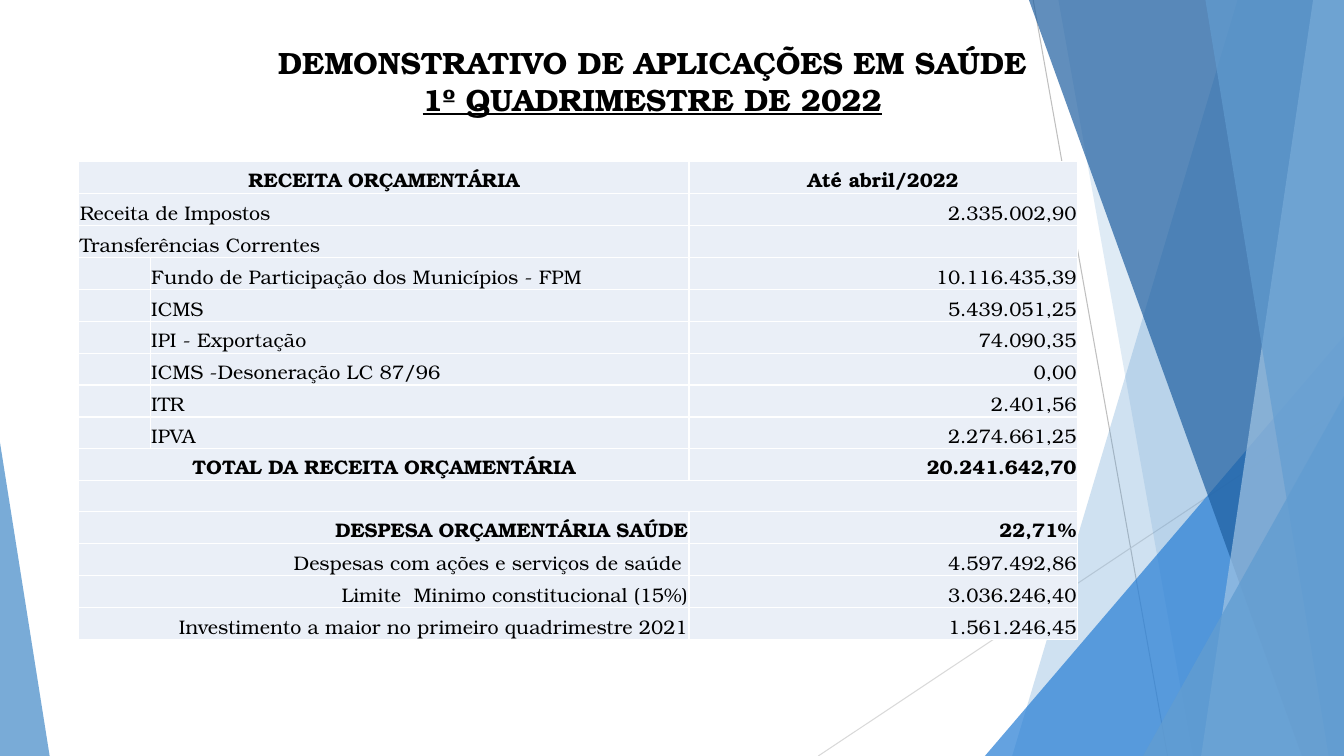
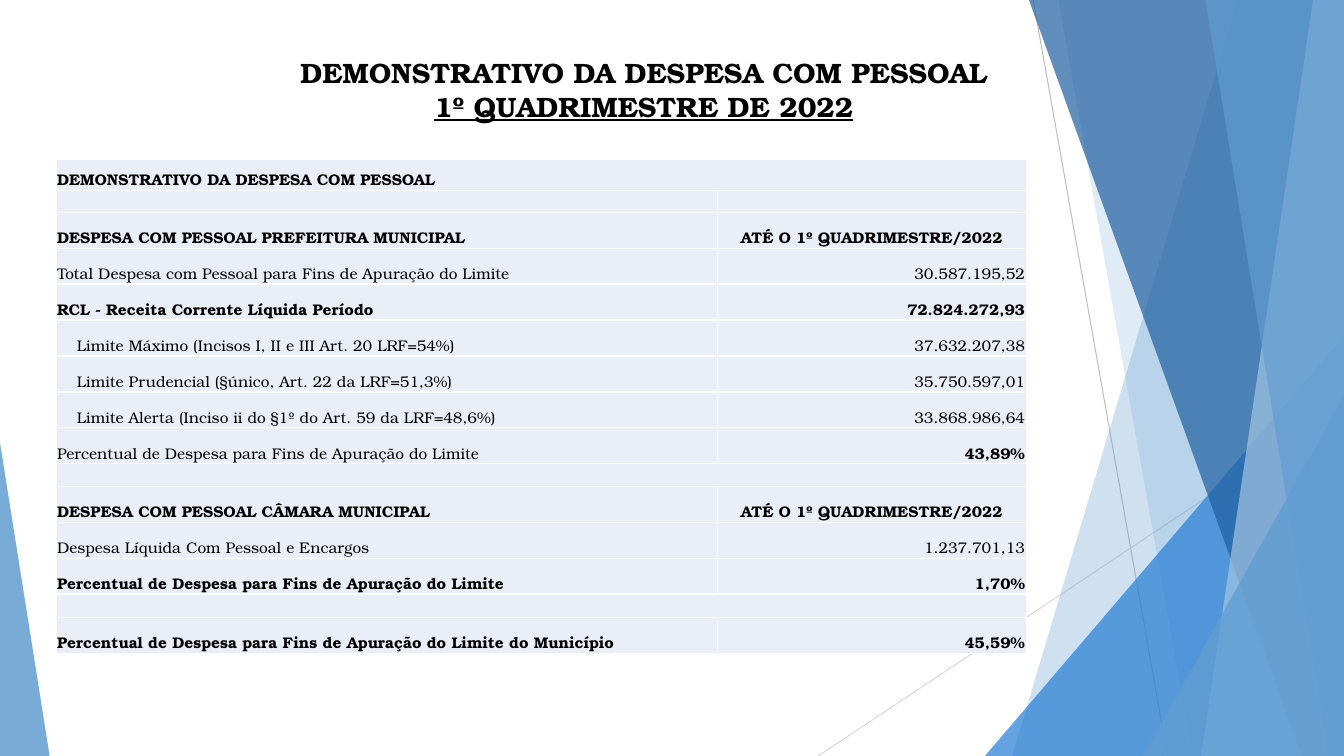
from dataclasses import dataclass

from lxml import etree
from pptx import Presentation
from pptx import util as u
from pptx.dml.color import RGBColor
from pptx.enum import shapes, text
from pptx.oxml.ns import qn

FONT = "TeX Gyre Bonum"
COLORS = {
    "ink": "000000",
    "cell": "EAEFF7",
    "sky": "629DD1",
    "blue": "297FD5",
    "navy": "1F5FA0",
    "pale": "A1C4E3",
    "line": "BFBFBF",
    "faint line": "D9D9D9",
}
WIDTH, HEIGHT = 960, 540
LEFT, CENTER, RIGHT = text.PP_ALIGN.LEFT, text.PP_ALIGN.CENTER, text.PP_ALIGN.RIGHT
CELL_INSET = 0.75
PERIOD = "1º QUADRIMESTRE DE 2022"
UP_TO_PERIOD = "ATÉ O 1º QUADRIMESTRE/2022"


@dataclass
class Row:
    """One table line: a label, and a value in the last column."""
    label: str = ""
    value: str = ""
    bold: bool = False
    value_bold: bool = False
    align: text.PP_ALIGN = LEFT
    value_align: text.PP_ALIGN = RIGHT
    nested: bool = False
    full_width: bool = False
    left: float = CELL_INSET
    right: float = CELL_INSET
    height: float = 0


def color(name):
    return RGBColor.from_string(COLORS[name])


def style_font(font, size, bold):
    font.name = FONT
    font.size = u.Pt(size)
    font.bold = bold
    font.color.rgb = color("ink")


def paint(shape, fill, opacity):
    """Fill a shape with a see-through colour, with no outline or shadow."""
    shape.shadow.inherit = False
    shape.line.fill.background()
    shape.fill.solid()
    shape.fill.fore_color.rgb = color(fill)
    tint = next(shape.element.spPr.iter(qn("a:srgbClr")))
    etree.SubElement(tint, qn("a:alpha"), val=str(opacity * 1000))
    return shape


def add_line(page, start, end, stroke):
    points = [u.Pt(value) for value in (*start, *end)]
    line = page.shapes.add_connector(shapes.MSO_CONNECTOR.STRAIGHT, *points)
    line.line.color.rgb = color(stroke)
    line.line.width = u.Pt(0.75)
    etree.SubElement(line.element.spPr, qn("a:effectLst"))
    return line


def add_band(page, top_x, bottom_x, fill, opacity):
    """Add a band with a slanted left edge, reaching the right edge of the page."""
    builder = page.shapes.build_freeform(top_x, 0, scale=u.Pt(1))
    builder.add_line_segments([(WIDTH, 0), (WIDTH, HEIGHT), (bottom_x, HEIGHT)])
    return paint(builder.convert_to_shape(), fill, opacity)


def add_triangle(page, left, top, width, apex, fill, opacity):
    """Add a triangle standing on the bottom edge; apex is 0 (left) to 1 (right)."""
    box = [u.Pt(value) for value in (left, top, width, HEIGHT - top)]
    triangle = page.shapes.add_shape(shapes.MSO_SHAPE.ISOSCELES_TRIANGLE, *box)
    triangle.adjustments[0] = apex
    return paint(triangle, fill, opacity)


def build_layout(deck):
    """Move the shared backdrop, drawn on the first slide, into the layout."""
    layout = deck.slide_layouts.get_by_name("Title Only")
    for holder in list(layout.placeholders):
        if holder.placeholder_format.type != shapes.PP_PLACEHOLDER.TITLE:
            holder.element.getparent().remove(holder.element)
    page = deck.slides.add_slide(layout)
    backdrop = [
        add_line(page, (738, 0), (834, HEIGHT), "line"),
        add_line(page, (WIDTH, 290), (584.5, HEIGHT), "faint line"),
        add_band(page, 884, 723, "sky", 30),
        add_band(page, 756, 852, "sky", 20),
        add_triangle(page, 703.5, 240, 256.5, 1, "blue", 72),
        add_band(page, 735, 930, "navy", 70),
        add_band(page, 938, 858, "pale", 70),
        add_band(page, 861, 949, "sky", 65),
        add_triangle(page, 816.5, 283, 143.5, 1, "sky", 80),
        add_triangle(page, 0, 316, 35.5, 0, "sky", 85),
    ]
    for index, shape in enumerate(backdrop, start=2):
        layout.shapes.element.insert(index, shape.element)
    return page, layout


def set_title(page, heading, left, top, size):
    title = page.shapes.title
    title.left, title.top = u.Pt(left), u.Pt(top)
    title.width, title.height = u.Pt(677), u.Pt(103.5)
    frame = title.text_frame
    frame.vertical_anchor = text.MSO_ANCHOR.TOP
    frame.auto_size = text.MSO_AUTO_SIZE.NONE
    para = frame.paragraphs[0]
    para.alignment = CENTER
    style_font(para.font, size, True)
    para.add_run().text = heading
    para.add_line_break()
    span = para.add_run()
    span.text = PERIOD
    span.font.underline = True


def format_cell(cell, size):
    cell.fill.solid()
    cell.fill.fore_color.rgb = color("cell")
    cell.vertical_anchor = text.MSO_ANCHOR.BOTTOM
    cell.margin_left = cell.margin_right = cell.margin_top = u.Pt(CELL_INSET)
    cell.margin_bottom = 0
    para = cell.text_frame.paragraphs[0]
    style_font(para.font, size, False)
    etree.SubElement(para._p, qn("a:endParaRPr"), sz=str(size * 100))


def write_cell(cell, wording, align, bold):
    if wording:
        para = cell.text_frame.paragraphs[0]
        para.add_run().text = wording
        para.alignment = align
        para.font.bold = bold


def add_budget_table(page, left, top, columns, rows, row_height, size):
    heights = [row.height or row_height for row in rows]
    frame = page.shapes.add_table(
        len(rows), len(columns), u.Pt(left), u.Pt(top),
        u.Pt(sum(columns)), u.Pt(sum(heights)))
    table = frame.table
    table.first_row = table.horz_banding = False
    for column, width in zip(table.columns, columns):
        column.width = u.Pt(width)
    for line, height in zip(table.rows, heights):
        line.height = u.Pt(height)
    for cell in table.iter_cells():
        format_cell(cell, size)

    last = len(columns) - 1
    for index, row in enumerate(rows):
        first = 1 if row.nested else 0
        end = last if row.full_width else last - 1
        label = table.cell(index, first)
        if end > first:
            label.merge(table.cell(index, end))
        label.margin_left, label.margin_right = u.Pt(row.left), u.Pt(row.right)
        write_cell(label, row.label, row.align, row.bold)
        if not row.full_width:
            write_cell(table.cell(index, last), row.value, row.value_align,
                       row.bold or row.value_bold)


def health_rows():
    transfers = [
        ("Fundo de Participação dos Municípios - FPM", "10.116.435,39"),
        ("ICMS", "5.439.051,25"),
        ("IPI - Exportação", "74.090,35"),
        ("ICMS -Desoneração LC 87/96", "0,00"),
        ("ITR", "2.401,56"),
        ("IPVA", "2.274.661,25"),
    ]
    return [
        Row("RECEITA ORÇAMENTÁRIA", "Até abril/2022", bold=True,
            align=CENTER, value_align=CENTER),
        Row("Receita de Impostos", "2.335.002,90"),
        Row("Transferências Correntes"),
        *[Row(label, value, nested=True) for label, value in transfers],
        Row("TOTAL DA RECEITA ORÇAMENTÁRIA", "20.241.642,70", bold=True, align=CENTER),
        Row(full_width=True, height=22.25),
        Row("DESPESA ORÇAMENTÁRIA SAÚDE", "22,71%", bold=True, align=RIGHT),
        Row("Despesas com ações e serviços de saúde", "4.597.492,86",
            align=RIGHT, right=5),
        Row("Limite  Minimo constitucional (15%)", "3.036.246,40", align=RIGHT),
        Row("Investimento a maior no primeiro quadrimestre 2021", "1.561.246,45",
            align=RIGHT),
    ]


def staff_rows():
    share = "Percentual de Despesa para Fins de Apuração do Limite"
    limits = [
        ("Limite Máximo (Incisos I, II e III Art. 20 LRF=54%)", "37.632.207,38"),
        ("Limite Prudencial (§único, Art. 22 da LRF=51,3%)", "35.750.597,01"),
        ("Limite Alerta (Inciso ii do §1º do Art. 59 da LRF=48,6%)", "33.868.986,64"),
    ]
    return [
        Row("DEMONSTRATIVO DA DESPESA COM PESSOAL", bold=True, full_width=True, height=22),
        Row(height=15),
        Row("DESPESA COM PESSOAL PREFEITURA MUNICIPAL", UP_TO_PERIOD,
            bold=True, value_align=CENTER),
        Row("Total Despesa com Pessoal para Fins de Apuração do Limite", "30.587.195,52"),
        Row("RCL - Receita Corrente Líquida Período", "72.824.272,93", bold=True),
        *[Row(label, value, left=15) for label, value in limits],
        Row(share, "43,89%", value_bold=True),
        Row(full_width=True, height=16),
        Row("DESPESA COM PESSOAL CÂMARA MUNICIPAL", UP_TO_PERIOD,
            bold=True, value_align=CENTER),
        Row("Despesa Líquida Com Pessoal e Encargos", "1.237.701,13"),
        Row(share, "1,70%", bold=True),
        Row(full_width=True, height=16.5),
        Row(share + " do Município", "45,59%", bold=True),
    ]


def main():
    deck = Presentation()
    deck.slide_width, deck.slide_height = u.Pt(WIDTH), u.Pt(HEIGHT)

    health, layout = build_layout(deck)
    set_title(health, "DEMONSTRATIVO DE APLICAÇÕES EM SAÚDE", 127.5, 27.5, 22)
    add_budget_table(health, 56.25, 115.5, [51, 385, 277.5], health_rows(), 22.8, 14)

    staff = deck.slides.add_slide(layout)
    set_title(staff, "DEMONSTRATIVO DA DESPESA COM PESSOAL", 121.5, 36, 20)
    add_budget_table(staff, 40, 114, [472.5, 220.5], staff_rows(), 25.7, 11)

    deck.save("out.pptx")


if __name__ == "__main__":
    main()
